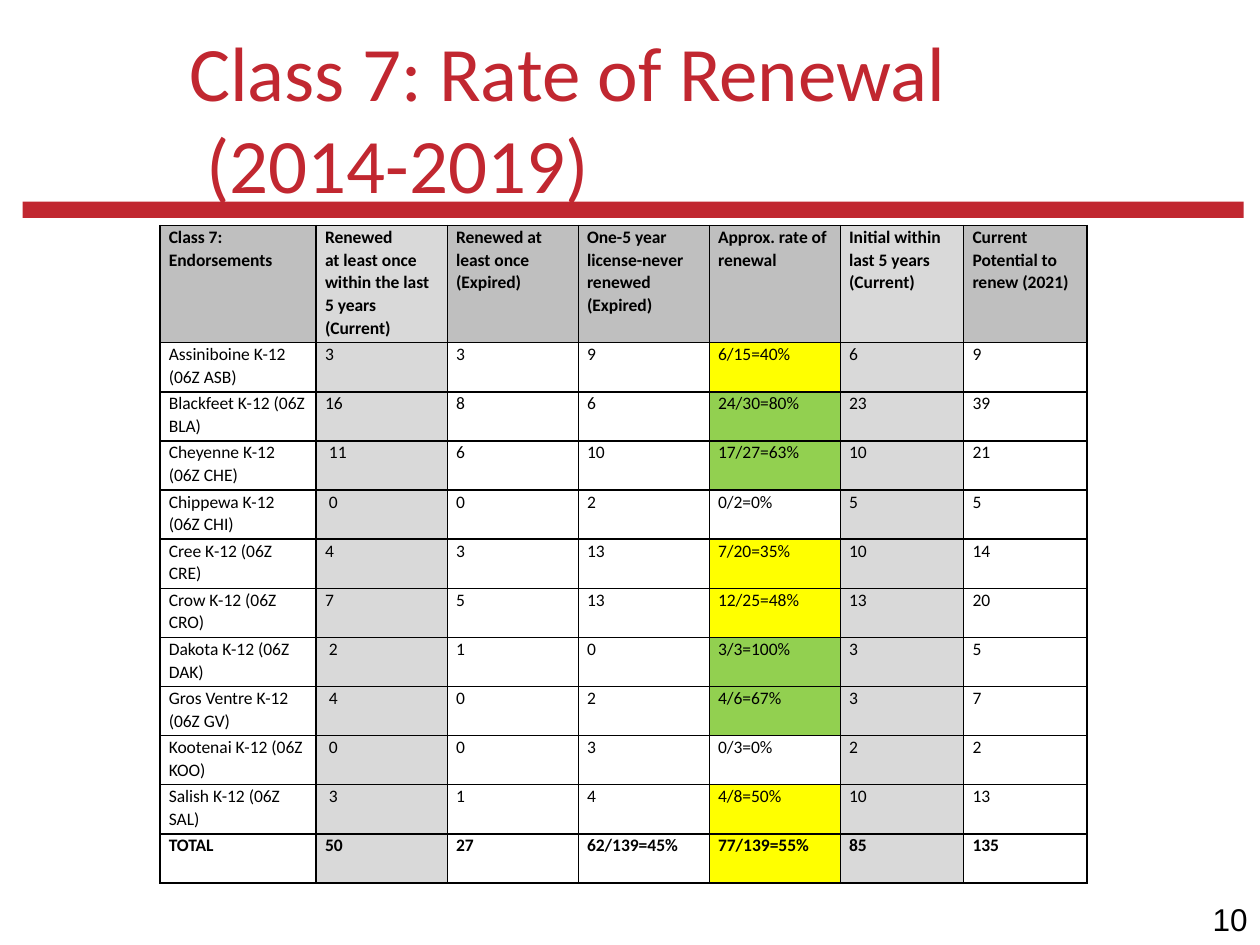
from lxml.etree import SubElement as Sub
from pptx import Presentation
from pptx.dml.color import RGBColor as Rgb
from pptx.enum.shapes import MSO_SHAPE as Kind
from pptx.enum.text import MSO_ANCHOR as Anchor, MSO_AUTO_SIZE as Auto, PP_ALIGN as Align
from pptx.oxml.ns import qn
from pptx.util import Inches, Pt

HUES = {
    "red": "C12730", "black": "000000", "white": "FFFFFF", "dark": "BFBFBF",
    "light": "D9D9D9", "yellow": "FFFF00", "green": "92D050",
}
WIDTHS = [1.24] + [1.04] * 4 + [0.98] * 2
HEAD, ROW = 0.93, 0.39
GREY = (1, 5)  # columns of current licenses
RATE = 4

ROWS = [
    ["Class 7: Endorsements",
     "Renewed\nat least once within the last 5 years\n(Current)",
     "Renewed at least once (Expired)",
     "One-5 year license-never renewed\n(Expired)",
     "Approx. rate of renewal",
     "Initial within last 5 years (Current)",
     "Current Potential to renew (2021)"],
    ["Assiniboine K-12 (06Z ASB)", "3", "3", "9", "6/15=40%", "6", "9"],
    ["Blackfeet K-12 (06Z BLA)", "16", "8", "6", "24/30=80%", "23", "39"],
    ["Cheyenne K-12 (06Z CHE)", " 11", "6", "10", "17/27=63%", "10", "21"],
    ["Chippewa K-12 (06Z CHI)", " 0", "0", "2", "0/2=0%", "5", "5"],
    ["Cree K-12 (06Z CRE)", "4", "3", "13", "7/20=35%", "10", "14"],
    ["Crow K-12 (06Z CRO)", "7", "5", "13", "12/25=48%", "13", "20"],
    ["Dakota K-12 (06Z DAK)", " 2", "1", "0", "3/3=100%", "3", "5"],
    ["Gros Ventre K-12 (06Z GV)", " 4", "0", "2", "4/6=67%", "3", "7"],
    ["Kootenai K-12 (06Z KOO)", " 0", "0", "3", "0/3=0%", "2", "2"],
    ["Salish K-12 (06Z SAL)", " 3", "1", "4", "4/8=50%", "10", "13"],
    ["TOTAL", "50", "27", "62/139=45%", "77/139=55%", "85", "135"],
]


def write(frame, text, size, hue="black", face="Calibri", bold=False,
          align=Align.LEFT, space=None):
    """Fill a frame: a newline starts a paragraph, a vertical tab breaks a line."""
    frame.word_wrap = True
    for n, line in enumerate(text.split("\n")):
        para = frame.add_paragraph() if n else frame.paragraphs[0]
        para.text = line
        para.alignment = align
        para.line_spacing = space
        for run in para.runs:
            font = run.font
            font.size, font.name, font.bold = Pt(size), face, bold
            font.color.rgb = Rgb.from_string(HUES[hue])


def paint(cell, hue):
    """Draw thin black borders, then the fill if there is one."""
    props = cell._tc.get_or_add_tcPr()
    for side in ("a:lnL", "a:lnR", "a:lnT", "a:lnB"):
        line = Sub(props, qn(side), w=str(Pt(1)))
        Sub(Sub(line, qn("a:solidFill")), qn("a:srgbClr"), val=HUES["black"])
    if hue:
        cell.fill.solid()
        cell.fill.fore_color.rgb = Rgb.from_string(HUES[hue])
    else:
        cell.fill.background()


deck = Presentation()
deck.slide_width, deck.slide_height = Inches(10), Inches(7.5)
slide = deck.slides.add_slide(deck.slide_layouts[5])
shapes = slide.shapes

# Red rule under the title
bar = shapes.add_shape(Kind.RECTANGLE, Inches(0.18), Inches(1.6), Inches(9.69), Inches(0.13))
bar.shadow.inherit = False
bar.fill.solid()
bar.fill.fore_color.rgb = Rgb.from_string(HUES["red"])
bar.line.fill.background()

# Title
title = shapes.title
title.left, title.top = Inches(1.4), Inches(0.3)
title.width, title.height = Inches(8.44), Inches(1.25)
title.text_frame.auto_size = Auto.NONE
title.text_frame.vertical_anchor = Anchor.MIDDLE
write(title.text_frame, "Class 7: Rate of Renewal\v (2014-2019)", 44, hue="red")

# Page number
page = shapes.add_textbox(Inches(7.32), Inches(7.09), Inches(2.68), Inches(0.4))
write(page.text_frame, "10", 18, face="Arial", align=Align.RIGHT)

# Renewal table
last = len(ROWS) - 1
table = shapes.add_table(
    len(ROWS), len(WIDTHS), Inches(1.27), Inches(1.79),
    Inches(sum(WIDTHS)), Inches(HEAD + ROW * last)).table
for col, width in zip(table.columns, WIDTHS):
    col.width = Inches(width)
for r, row in enumerate(ROWS):
    table.rows[r].height = Inches(ROW if r else HEAD)
    for c, text in enumerate(row):
        cell = table.cell(r, c)
        cell.margin_left = cell.margin_right = Inches(0.07)
        cell.margin_top = cell.margin_bottom = 0
        write(cell.text_frame, text, 10, bold=r in (0, last), space=1.07)
        hue = None
        if c in GREY:
            hue = "light"
        elif r == 0:
            hue = "dark"
        elif c == RATE:
            rate = int(text.split("=")[1].rstrip("%"))
            hue = "green" if rate > 60 else "yellow" if rate else "white"
        paint(cell, hue)

deck.save("out.pptx")
